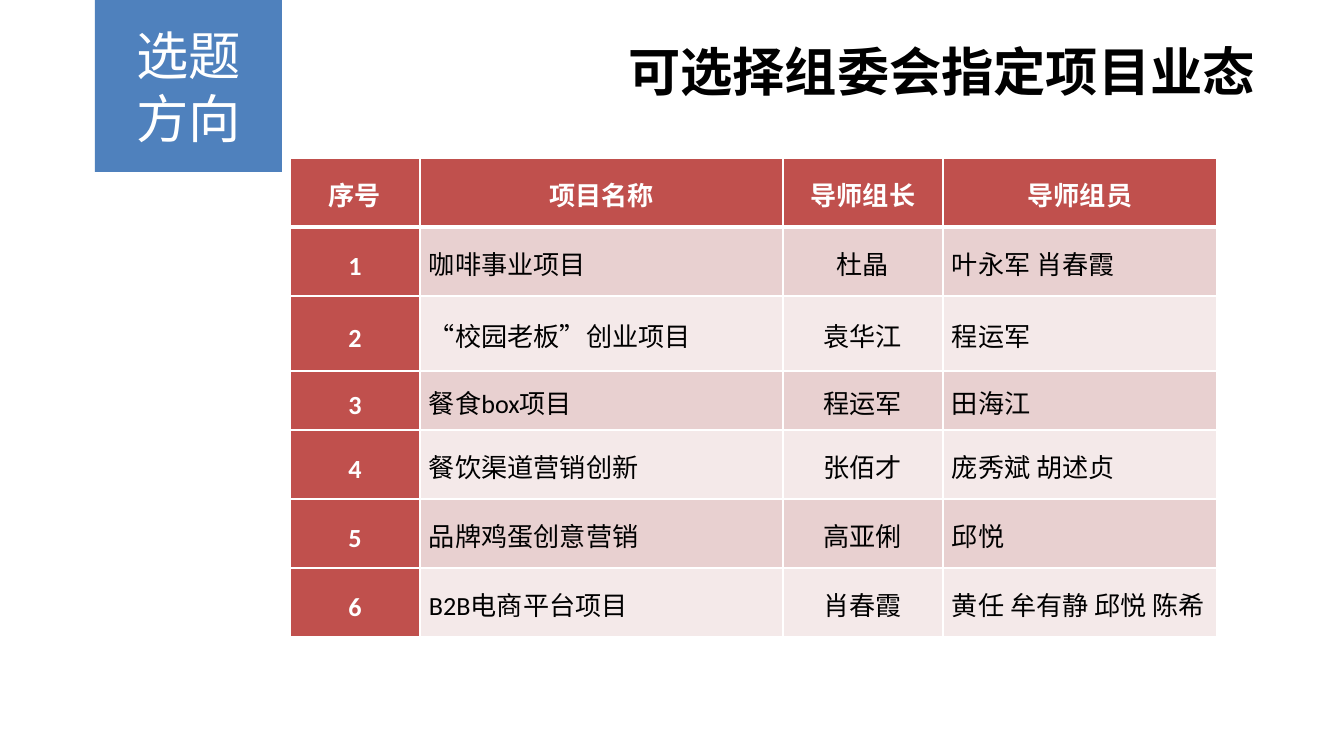
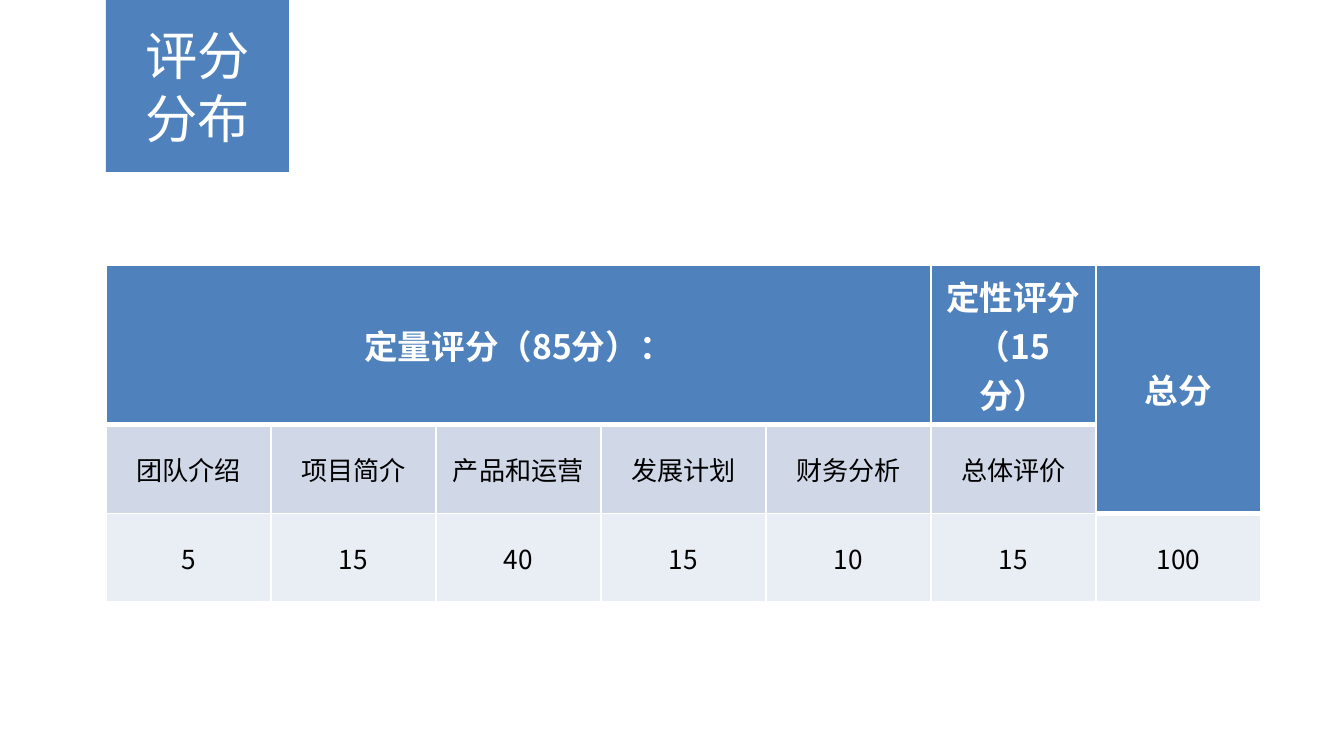
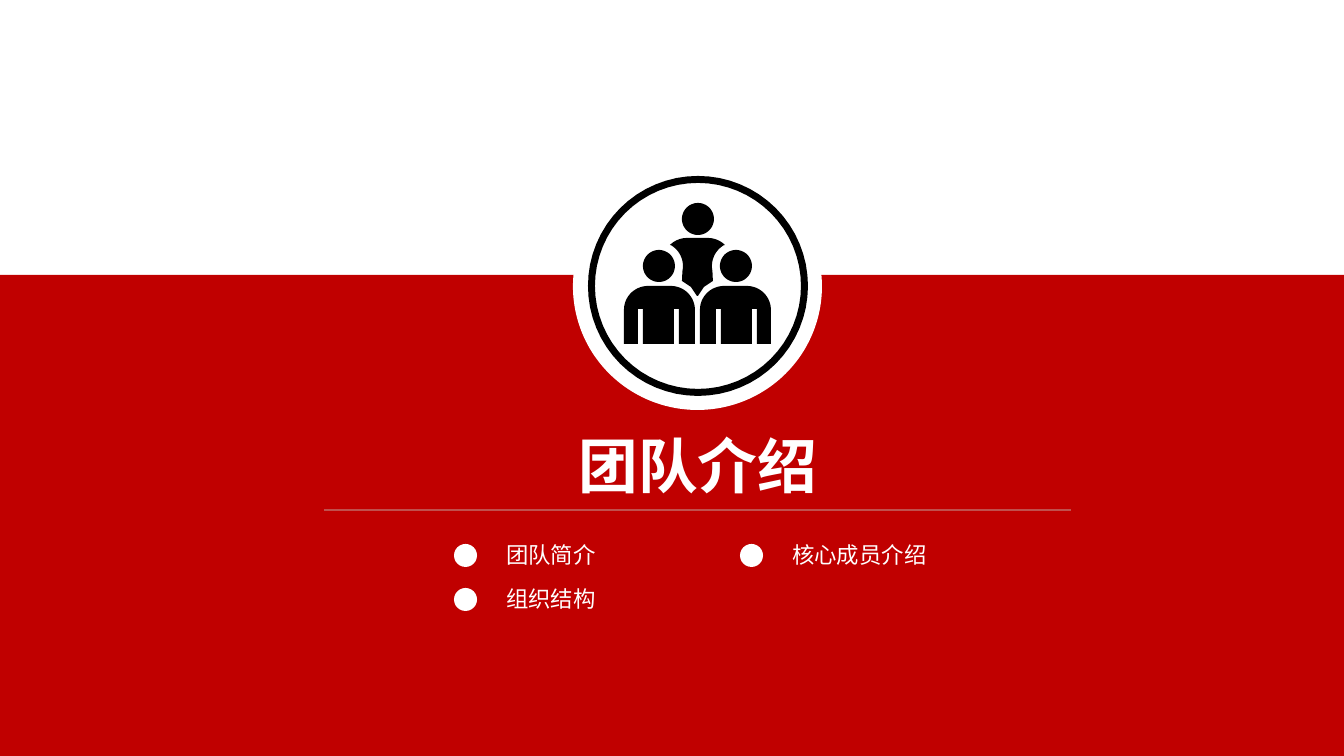
from dataclasses import dataclass
from math import cos, radians, sin

from lxml import etree
from pptx import Presentation
from pptx.dml.color import RGBColor
from pptx.enum.shapes import MSO_CONNECTOR, MSO_SHAPE
from pptx.enum.text import MSO_ANCHOR, MSO_AUTO_SIZE, PP_ALIGN
from pptx.oxml.ns import qn
from pptx.util import Pt

RECTANGLE, OVAL = MSO_SHAPE.RECTANGLE, MSO_SHAPE.OVAL
STRAIGHT = MSO_CONNECTOR.STRAIGHT
LEFT, CENTER, RIGHT = PP_ALIGN.LEFT, PP_ALIGN.CENTER, PP_ALIGN.RIGHT
JUSTIFY = PP_ALIGN.JUSTIFY
TOP, MIDDLE = MSO_ANCHOR.TOP, MSO_ANCHOR.MIDDLE
FIXED, GROW = MSO_AUTO_SIZE.NONE, MSO_AUTO_SIZE.SHAPE_TO_FIT_TEXT
TITLE_ONLY = 5
PIXELS_PER_INCH = 134.4
MIRROR_SUM = 1395


@dataclass(frozen=True)
class Theme:
    white: str = "FFFFFF"
    black: str = "000000"
    blue: str = "4F81BD"
    blue_bands: tuple = ("D0D8E8", "E9EDF4")
    red: str = "C0504D"
    red_bands: tuple = ("E8D0D0", "F4E9E9")
    deep_red: str = "C00000"
    font: str = "Noto Sans CJK SC"
    table_font: str = "Calibri"
    cover_size: int = 32
    title_size: int = 28
    header_size: int = 18
    body_size: int = 14
    item_size: int = 12


THEME = Theme()


def px(value):
    return round(value * 914400 / PIXELS_PER_INCH)


def color(value):
    return RGBColor.from_string(value)


def write_text(frame, text, size, fill=THEME.black, bold=False, align=LEFT,
               font=THEME.font, spacing=None):
    for index, line in enumerate(text.split("\n")):
        paragraph = frame.add_paragraph() if index else frame.paragraphs[0]
        paragraph.alignment = align
        if spacing:
            paragraph.line_spacing = Pt(spacing)
        run = paragraph.add_run()
        run.text = line
        run.font.size = Pt(size)
        run.font.bold = bold
        run.font.color.rgb = color(fill)
        run.font.name = font
        east_asian = etree.SubElement(run.font._element, qn("a:ea"))
        east_asian.set("typeface", THEME.font)


def fill_shape(shape, fill):
    shape.fill.solid()
    shape.fill.fore_color.rgb = color(fill)
    shape.line.fill.background()
    shape.shadow.inherit = False


def add_filled(slide, kind, left, top, width, height, fill):
    shape = slide.shapes.add_shape(kind, px(left), px(top), px(width), px(height))
    fill_shape(shape, fill)
    return shape


def place_title(slide, left, top, width, height, text, size, **text_format):
    title = slide.shapes.title
    title.left, title.top = px(left), px(top)
    title.width, title.height = px(width), px(height)
    title.element.getparent().append(title.element)
    frame = title.text_frame
    frame.word_wrap, frame.auto_size = True, FIXED
    frame.vertical_anchor = TOP
    write_text(frame, text, size, **text_format)
    return title


def add_label(slide, left, top, width, height, text, size, **text_format):
    frame = slide.shapes.add_textbox(px(left), px(top), px(width), px(height)).text_frame
    frame.word_wrap, frame.auto_size = True, GROW
    write_text(frame, text, size, **text_format)


def add_rule(slide, left, right, y, fill, width):
    rule = slide.shapes.add_connector(STRAIGHT, px(left), px(y), px(right), px(y))
    rule.line.color.rgb = color(fill)
    rule.line.width = Pt(width)
    etree.SubElement(rule.element.spPr, qn("a:effectLst"))


def add_table(slide, left, top, columns, rows):
    table = slide.shapes.add_table(len(rows), len(columns), px(left), px(top),
                                   px(sum(columns)), px(sum(rows))).table
    table.first_row = table.horz_banding = False
    for column, width in zip(table.columns, columns):
        column.width = px(width)
    for row, height in zip(table.rows, rows):
        row.height = px(height)
    return table


def style_cell(cell, fill, header=False):
    properties = cell._tc.get_or_add_tcPr()
    borders = {"lnL": 1, "lnR": 1}
    if header:
        borders["lnT"] = 1
    borders["lnB"] = 3 if header else 1
    for side, width in borders.items():
        line = etree.SubElement(properties, qn(f"a:{side}"), w=str(Pt(width)))
        solid = etree.SubElement(line, qn("a:solidFill"))
        etree.SubElement(solid, qn("a:srgbClr"), val=THEME.white)
    cell.fill.solid()
    cell.fill.fore_color.rgb = color(fill)
    cell.vertical_anchor = MIDDLE


def arc(center_x, center_y, radius, start, end, steps=16):
    angles = [radians(start + (end - start) * step / steps) for step in range(steps + 1)]
    return [(center_x + radius * cos(angle), center_y + radius * sin(angle))
            for angle in angles]


def circle(center_x, center_y, radius):
    return arc(center_x, center_y, radius, 0, 360, 64)


def mirror(points):
    return [(MIRROR_SUM - x, y) for x, y in reversed(points)]


def add_outline(slide, contours, fill):
    builder = None
    for contour in contours:
        points = [(px(x), px(y)) for x, y in contour]
        if builder is None:
            builder = slide.shapes.build_freeform(*points[0], scale=1.0)
        else:
            builder.move_to(*points[0])
        builder.add_line_segments(points[1:], close=True)
    fill_shape(builder.convert_to_shape(), fill)


def add_team_icon(slide):
    add_filled(slide, OVAL, 573, 163, 249, 247, THEME.white)
    add_outline(slide, [circle(698, 286, 110), circle(698, 286, 103)], THEME.black)
    head = circle(659, 266, 16)
    body = arc(648, 310, 24, 180, 270) + arc(671, 310, 24, 270, 360) + [
        (695, 344), (679, 344), (679, 309), (674, 309), (674, 344),
        (643, 344), (643, 309), (638, 309), (638, 344), (624, 344)]
    half_torso = arc(687, 262, 24, 270, 225) + arc(659, 266, 24, -60, 12) + [
        (682, 281), (691, 287), (697, 296)]
    add_outline(slide, [head, mirror(head), circle(698, 219, 16), body, mirror(body),
                        half_torso + mirror(half_torso)], THEME.black)


def build_topics(slide):
    tag = add_filled(slide, RECTANGLE, 95, 0, 187, 172, THEME.blue)
    tag.text_frame.vertical_anchor = MIDDLE
    write_text(tag.text_frame, "选题\n方向", THEME.title_size, fill=THEME.white, align=CENTER)
    place_title(slide, 513, 32, 755, 77, "可选择组委会指定项目业态", THEME.title_size,
                bold=True, align=RIGHT)
    records = [
        ("序号", "项目名称", "导师组长", "导师组员"),
        ("1", "咖啡事业项目", "杜晶", "叶永军 肖春霞"),
        ("2", "“校园老板”创业项目", "袁华江", "程运军"),
        ("3", "餐食box项目", "程运军", "田海江"),
        ("4", "餐饮渠道营销创新", "张佰才", "庞秀斌 胡述贞"),
        ("5", "品牌鸡蛋创意营销", "高亚俐", "邱悦"),
        ("6", "B2B电商平台项目", "肖春霞", "黄任 牟有静 邱悦 陈希"),
    ]
    table = add_table(slide, 290, 158, [130, 363, 160, 274], [69, 69, 75, 59, 69, 69, 69])
    for row, record in enumerate(records):
        for column, text in enumerate(record):
            cell = table.cell(row, column)
            strong = row == 0 or column == 0
            style_cell(cell, THEME.red if strong else THEME.red_bands[(row - 1) % 2], row == 0)
            cell.margin_left = cell.margin_right = px(9)
            cell.margin_top = cell.margin_bottom = 0
            write_text(cell.text_frame, text, THEME.body_size, bold=strong,
                       fill=THEME.white if strong else THEME.black,
                       align=JUSTIFY if row and column in (1, 3) else CENTER,
                       font=THEME.table_font, spacing=22)


def build_scores(slide):
    records = [
        ("定量评分（85分）：", "", "", "", "", "定性评分（15分）", "总分"),
        ("团队介绍", "项目简介", "产品和运营", "发展计划", "财务分析", "总体评价", ""),
        ("5", "15", "40", "15", "10", "15", "100"),
    ]
    table = add_table(slide, 106, 265, [165] * 7, [153, 89, 89])
    table.cell(0, 0).merge(table.cell(0, 4))
    table.cell(0, 6).merge(table.cell(1, 6))
    for row, record in enumerate(records):
        for column, text in enumerate(record):
            cell = table.cell(row, column)
            header = row == 0 or cell.is_spanned
            style_cell(cell, THEME.blue if header else THEME.blue_bands[row - 1], header)
            if text:
                write_text(cell.text_frame, text, bold=header, align=CENTER,
                           size=THEME.header_size if header else THEME.body_size,
                           fill=THEME.white if header else THEME.black)
    tag = place_title(slide, 106, 0, 183, 172, "评分分布", THEME.title_size,
                      fill=THEME.white, align=CENTER)
    fill_shape(tag, THEME.blue)
    tag.text_frame.vertical_anchor = MIDDLE


def build_team(slide):
    add_filled(slide, RECTANGLE, 0, 275, 1344, 481, THEME.deep_red)
    add_team_icon(slide)
    place_title(slide, 360, 422, 676, 86, "团队介绍", THEME.cover_size,
                fill=THEME.white, bold=True, align=CENTER)
    add_rule(slide, 324, 1071, 510, THEME.red, 0.75)
    for index, text in enumerate(["团队简介", "核心成员介绍", "组织结构"]):
        row, column = divmod(index, 2)
        left, top = 454 + 286 * column, 535 + 44 * row
        add_filled(slide, OVAL, left, top + 9, 23, 23, THEME.white)
        add_label(slide, left + 39, top, 245, 40, text, THEME.item_size, fill=THEME.white)


def main():
    presentation = Presentation()
    presentation.slide_width, presentation.slide_height = px(1344), px(756)
    for build in (build_topics, build_scores, build_team):
        build(presentation.slides.add_slide(presentation.slide_layouts[TITLE_ONLY]))
    presentation.save("out.pptx")


if __name__ == "__main__":
    main()
